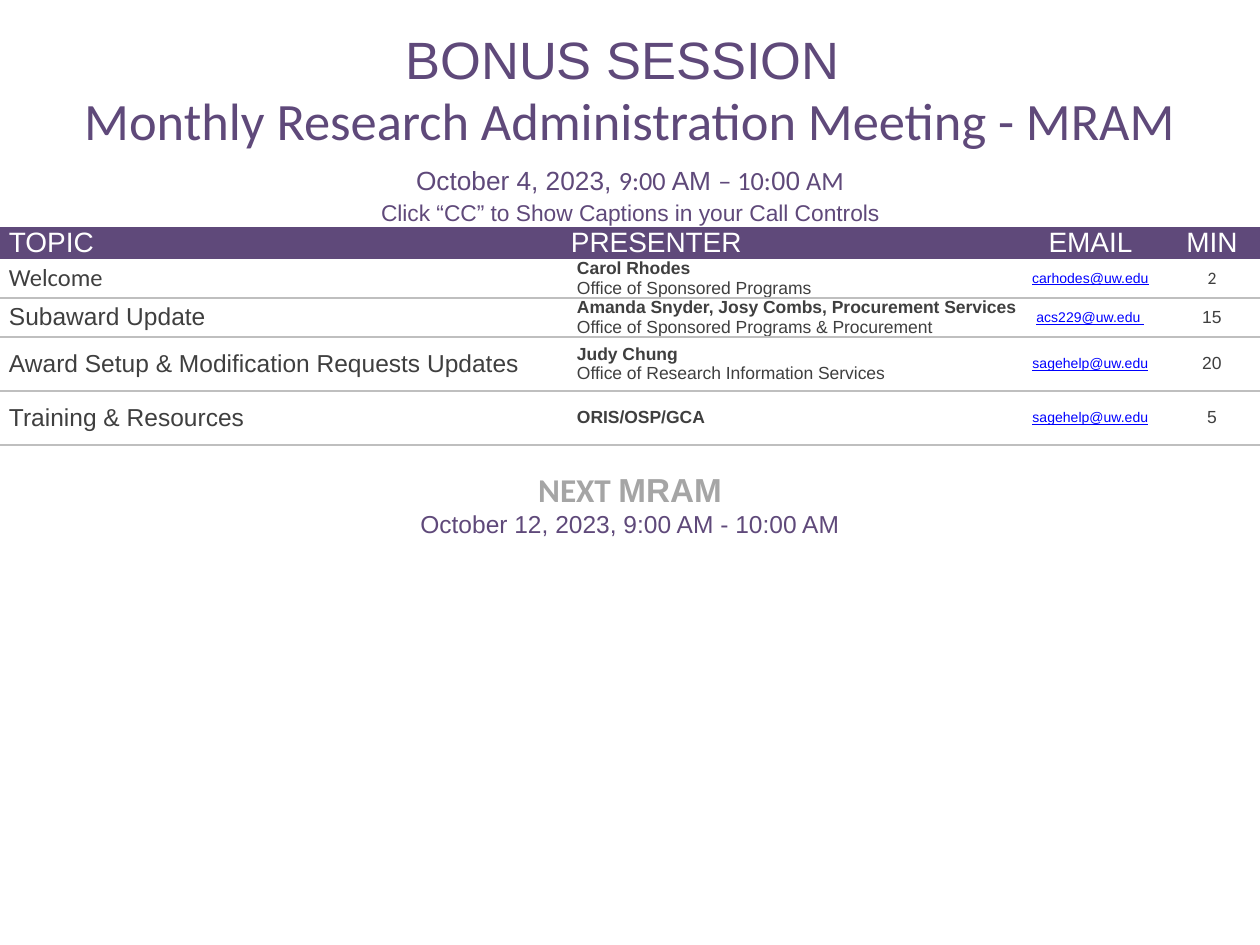
from dataclasses import dataclass

from lxml.etree import SubElement
from pptx import Presentation
from pptx.dml.color import RGBColor
from pptx.enum.text import MSO_ANCHOR, PP_ALIGN
from pptx.oxml.ns import qn
from pptx.table import Table, _Cell
from pptx.util import Emu, Pt

PX_PER_INCH = 126
COLORS = {
    "purple": "5F497A",
    "white": "FFFFFF",
    "text": "3F3F3F",
    "email": "0000FF",
    "next": "A5A5A5",
    "rule": "BFBFBF",
}
COLUMN_WIDTHS = [562, 470, 132, 96]
ROW_HEIGHTS = [118, 72, 32, 39, 39, 54, 54, 120]
TABLE_TOP = 32
HEADER_ROW = 2
LEFT, CENTER = PP_ALIGN.LEFT, PP_ALIGN.CENTER


@dataclass
class Span:
    text: str
    size: int
    color: str
    font: str = "Arial"
    bold: bool = False
    underline: bool = False


@dataclass
class Line:
    spans: list[Span]
    align: PP_ALIGN = LEFT
    spacing: float = 1.0


@dataclass
class AgendaItem:
    topic: str
    presenter: str
    office: str
    email: str
    minutes: str
    font: str = "Arial"


AGENDA = [
    AgendaItem("Welcome", "Carol Rhodes", "Office of Sponsored Programs",
               "carhodes@uw.edu", "2", "Calibri"),
    AgendaItem("Subaward Update", "Amanda Snyder, Josy Combs, Procurement Services",
               "Office of Sponsored Programs & Procurement", "acs229@uw.edu ", "15"),
    AgendaItem("Award Setup & Modification Requests Updates", "Judy Chung",
               "Office of Research Information Services", "sagehelp@uw.edu", "20"),
    AgendaItem("Training & Resources", "ORIS/OSP/GCA", "", "sagehelp@uw.edu", "5"),
]
TITLE = [
    Line([Span("BONUS SESSION ", 30, "purple")], CENTER),
    Line([Span("Monthly Research Administration Meeting - MRAM", 30, "purple", "Calibri")], CENTER),
]
SCHEDULE = [
    Line([Span(text, 15, "purple", font) for text, font in [
        ("October 4, 2023, ", "Arial"), ("9:00 ", "Calibri"), ("AM ", "Arial"),
        ("– 10:", "Calibri"), ("00", "Arial"), (" AM", "Calibri")]], CENTER),
    Line([Span("Click “CC” to Show Captions in your Call Controls", 13, "purple")], CENTER, 1.15),
]
NEXT_MEETING = [
    Line([Span("NEXT ", 19, "next", "Calibri", bold=True),
          Span("MRAM", 19, "next", bold=True)], CENTER),
    Line([Span("October 12, 2023, 9:00 AM - 10:00 AM", 14, "purple")], CENTER),
]


def px(length: int) -> Emu:
    return Emu(round(length * 914400 / PX_PER_INCH))


def rgb(name: str) -> RGBColor:
    return RGBColor.from_string(COLORS[name])


def write_cell(cell: _Cell, lines: list[Line], left: int = 9, right: int = 9,
               anchor: MSO_ANCHOR = MSO_ANCHOR.MIDDLE) -> None:
    cell.margin_left, cell.margin_right = px(left), px(right)
    cell.margin_top = cell.margin_bottom = 0
    cell.vertical_anchor = anchor
    text_frame = cell.text_frame
    for index, line in enumerate(lines):
        paragraph = text_frame.add_paragraph() if index else text_frame.paragraphs[0]
        paragraph.alignment = line.align
        paragraph.line_spacing = line.spacing
        for span in line.spans:
            run = paragraph.add_run()
            run.text = span.text
            run.font.name = span.font
            run.font.size = Pt(span.size)
            run.font.bold = span.bold
            run.font.underline = span.underline
            run.font.color.rgb = rgb(span.color)


def style_cell(cell: _Cell, fill: str, ruled_sides: str) -> None:
    """Draw 1 pt rules on the named sides (T, B), none on the others, then fill."""
    properties = cell._tc.get_or_add_tcPr()
    for side in "LRTB":
        border = SubElement(properties, qn(f"a:ln{side}"), w=str(Pt(1)))
        if side in ruled_sides:
            solid = SubElement(border, qn("a:solidFill"))
            SubElement(solid, qn("a:srgbClr"), val=COLORS["rule"])
        else:
            SubElement(border, qn("a:noFill"))
    cell.fill.solid()
    cell.fill.fore_color.rgb = rgb(fill)


def style_table(table: Table) -> None:
    table.first_row = table.horz_banding = False
    for column, width in zip(table.columns, COLUMN_WIDTHS):
        column.width = px(width)
    first_item = HEADER_ROW + 1
    last_item = HEADER_ROW + len(AGENDA)
    for index, (row, height) in enumerate(zip(table.rows, ROW_HEIGHTS)):
        row.height = px(height)
        top = "T" if first_item < index <= last_item + 1 else ""
        bottom = "B" if first_item <= index <= last_item else ""
        for cell in row.cells:
            style_cell(cell, "purple" if index == HEADER_ROW else "white", top + bottom)


def write_banner(table: Table, row: int, lines: list[Line], anchor: MSO_ANCHOR) -> None:
    """Fill a row that spans all columns."""
    banner = table.cell(row, 0)
    banner.merge(table.cell(row, len(COLUMN_WIDTHS) - 1))
    write_cell(banner, lines, anchor=anchor)


def write_agenda_item(table: Table, row: int, item: AgendaItem) -> None:
    topic, presenter, email, minutes = table.rows[row].cells
    write_cell(topic, [Line([Span(item.topic, 14, "text", item.font)])])
    people = [Line([Span(item.presenter, 10, "text", bold=True)])]
    if item.office:
        people.append(Line([Span(item.office, 10, "text")]))
    write_cell(presenter, people, 15, 15)
    write_cell(email, [Line([Span(item.email, 8, "email", underline=True)], CENTER)], 0, 15)
    write_cell(minutes, [Line([Span(item.minutes, 10, "text", item.font)], CENTER)])


def main() -> None:
    presentation = Presentation()
    presentation.slide_width, presentation.slide_height = px(1260), px(945)
    slide = presentation.slides.add_slide(presentation.slide_layouts[6])
    table = slide.shapes.add_table(
        len(ROW_HEIGHTS), len(COLUMN_WIDTHS), 0, px(TABLE_TOP),
        px(sum(COLUMN_WIDTHS)), px(sum(ROW_HEIGHTS))).table
    style_table(table)

    write_banner(table, 0, TITLE, MSO_ANCHOR.BOTTOM)
    write_banner(table, 1, SCHEDULE, MSO_ANCHOR.BOTTOM)
    headings = [("TOPIC", LEFT), ("PRESENTER", LEFT), (" EMAIL", LEFT), ("MIN", CENTER)]
    for cell, (heading, align) in zip(table.rows[HEADER_ROW].cells, headings):
        write_cell(cell, [Line([Span(heading, 16, "white")], align)])
    for row, item in enumerate(AGENDA, HEADER_ROW + 1):
        write_agenda_item(table, row, item)
    write_banner(table, len(ROW_HEIGHTS) - 1, NEXT_MEETING, MSO_ANCHOR.MIDDLE)

    presentation.save("out.pptx")


if __name__ == "__main__":
    main()
